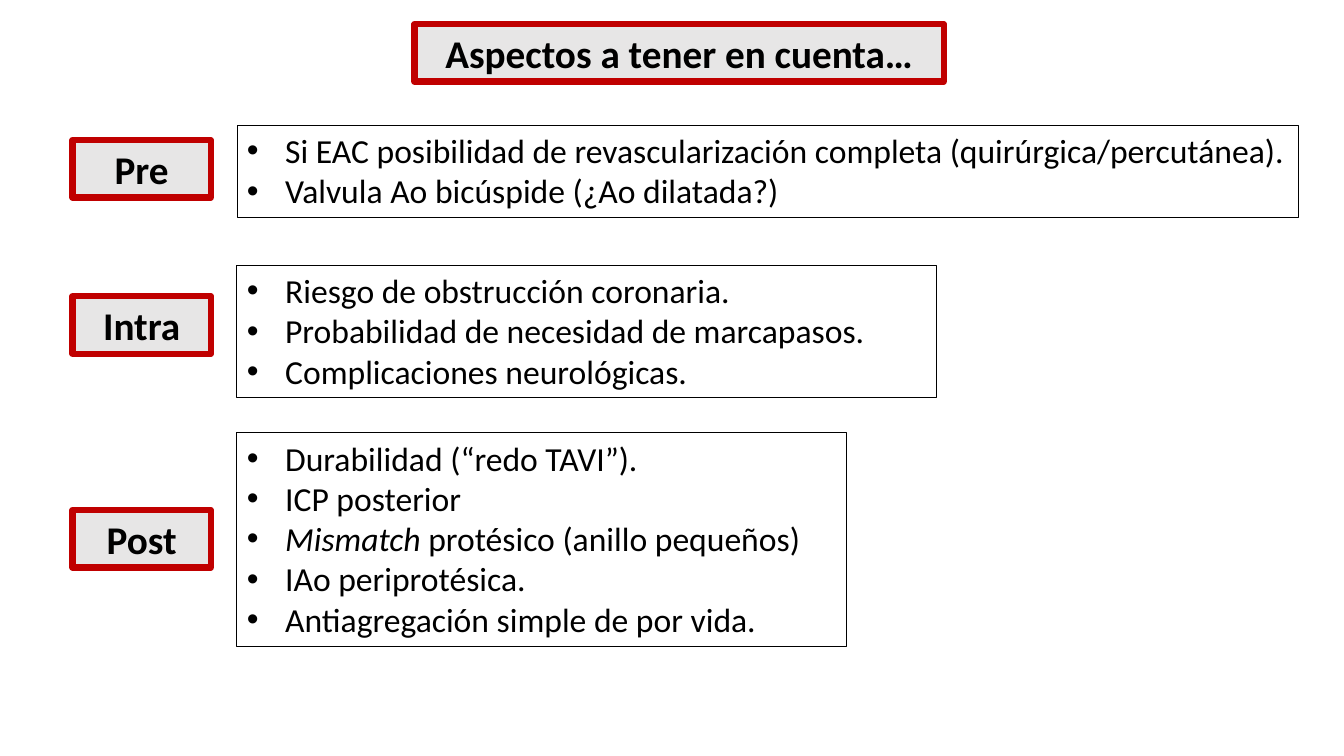
from dataclasses import dataclass

from lxml import etree
from pptx import Presentation
from pptx.dml.color import RGBColor
from pptx.enum.text import MSO_AUTO_SIZE, PP_ALIGN
from pptx.oxml.ns import qn
from pptx.util import Emu, Pt


@dataclass(frozen=True)
class Theme:
    font: str = "Calibri"
    ink: RGBColor = RGBColor(0, 0, 0)
    paper: RGBColor = RGBColor(255, 255, 255)
    grey: RGBColor = RGBColor(0xE7, 0xE6, 0xE6)
    red: RGBColor = RGBColor(0xC0, 0, 0)
    label_size: Pt = Pt(28)
    body_size: Pt = Pt(24)
    label_line: Pt = Pt(4.5)


THEME = Theme()
PX = 9144  # 100 px to the inch
LABEL_X, LABEL_W, LABEL_H = 72, 137, 57
PANEL_X, INDENT = 235, 38


def add_box(x, y, w, h, fill, line, weight):
    """Add a filled, outlined text box that grows with its text."""
    sp = slide.shapes.add_textbox(*(Emu(v * PX) for v in (x, y, w, h)))
    sp.fill.solid()
    sp.fill.fore_color.rgb = fill
    sp.line.color.rgb = line
    sp.line.width = weight
    sp.text_frame.word_wrap = True
    sp.text_frame.auto_size = MSO_AUTO_SIZE.SHAPE_TO_FIT_TEXT
    return sp


def add_run(p, text, size, bold=False, italic=False):
    r = p.add_run()
    r.text = text
    r.font.name = THEME.font
    r.font.size = size
    r.font.bold = bold
    r.font.italic = italic
    r.font.color.rgb = THEME.ink


prs = Presentation()
prs.slide_width, prs.slide_height = Emu(1333 * PX), Emu(750 * PX)
slide = prs.slides.add_slide(prs.slide_layouts[6])

# Panels: top, width, height, line weight, bullets as (text, italic) runs
panels = [
    (124, 1053, 91, Pt(0.25), [
        [("Si EAC posibilidad de revascularización completa (quirúrgica/percutánea).", False)],
        [("Valvula Ao bicúspide (¿Ao dilatada?)", False)],
    ]),
    (263, 694, 131, Pt(0.75), [
        [("Riesgo de obstrucción coronaria.", False)],
        [("Probabilidad de necesidad de marcapasos.", False)],
        [("Complicaciones neurológicas.", False)],
    ]),
    (429, 605, 212, Pt(0.75), [
        [("Durabilidad (“redo TAVI”).", False)],
        [("ICP posterior", False)],
        [("Mismatch", True), (" protésico (anillo pequeños)", False)],
        [("IAo periprotésica.", False)],
        [("Antiagregación simple de por vida.", False)],
    ]),
]
for y, w, h, weight, bullets in panels:
    tf = add_box(PANEL_X, y, w, h, THEME.paper, THEME.ink, weight).text_frame
    for i, runs in enumerate(bullets):
        p = tf.add_paragraph() if i else tf.paragraphs[0]
        pPr = p._p.get_or_add_pPr()
        pPr.set("marL", str(INDENT * PX))
        pPr.set("indent", str(-INDENT * PX))
        etree.SubElement(pPr, qn("a:buFont"), typeface="Arial")
        etree.SubElement(pPr, qn("a:buChar"), char="•")
        for text, italic in runs:
            add_run(p, text, THEME.body_size, italic=italic)

# Title and stage labels: left, top, width, text
labels = [
    (411, 24, 525, "Aspectos a tener en cuenta…"),
    (LABEL_X, 139, LABEL_W, "Pre"),
    (LABEL_X, 294, LABEL_W, "Intra"),
    (LABEL_X, 506, LABEL_W, "Post"),
]
for x, y, w, text in labels:
    sp = add_box(x, y, w, LABEL_H, THEME.grey, THEME.red, THEME.label_line)
    etree.SubElement(sp.line._get_or_add_ln(), qn("a:round"))
    p = sp.text_frame.paragraphs[0]
    p.alignment = PP_ALIGN.CENTER
    add_run(p, text, THEME.label_size, bold=True)

prs.save("out.pptx")
